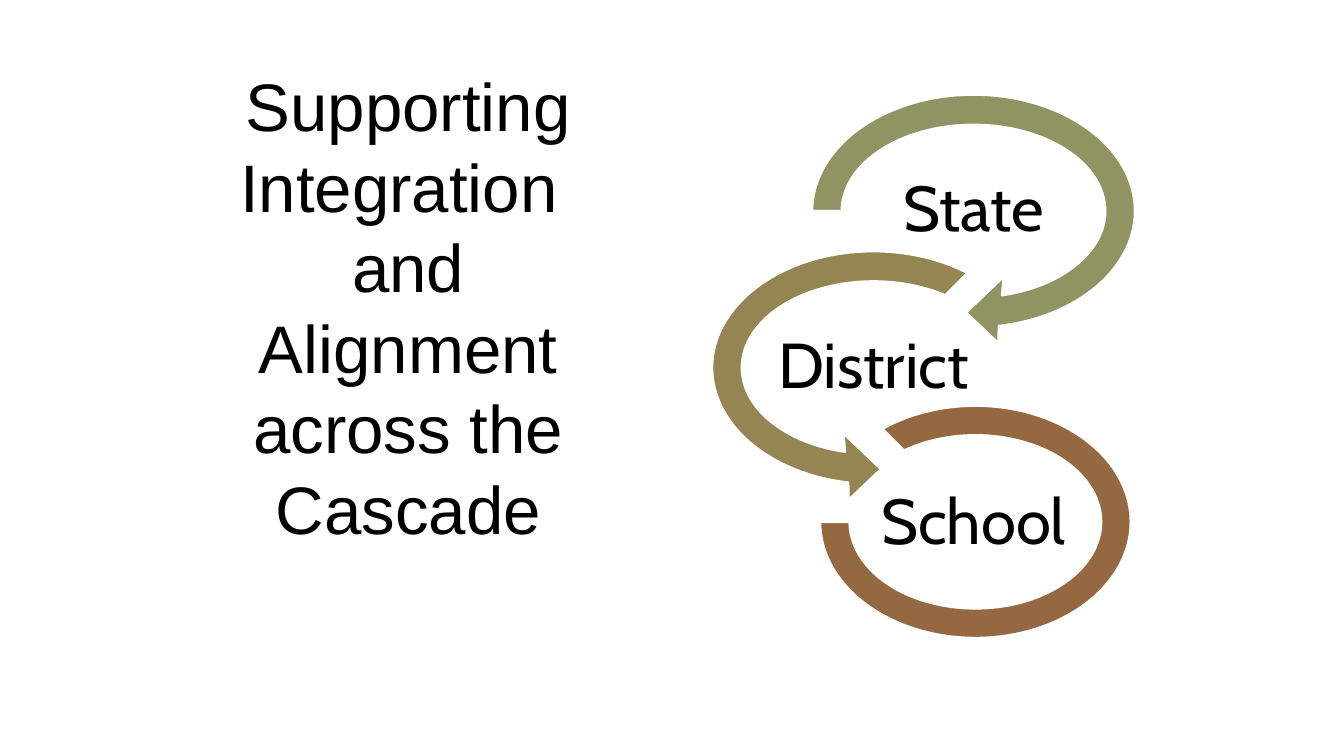
from math import ceil, cos, radians, sin, tan

from lxml import etree
from pptx import Presentation
from pptx.dml.color import RGBColor
from pptx.enum.shapes import MSO_SHAPE
from pptx.enum.text import MSO_ANCHOR, MSO_AUTO_SIZE, PP_ALIGN
from pptx.oxml.ns import qn
from pptx.util import Cm, Pt

CENTER = PP_ALIGN.CENTER
MIDDLE, BOTTOM = MSO_ANCHOR.MIDDLE, MSO_ANCHOR.BOTTOM
NO_AUTOFIT = MSO_AUTO_SIZE.NONE
BLOCK_ARC = MSO_SHAPE.BLOCK_ARC

# Content
TITLE = "Supporting Integration \vand Alignment across the Cascade"
LEVELS = [("State", "909462"), ("District", "948552"), ("School", "946941")]

# Layout, in cm
TITLE_BOX = (4.02, 4.77, 7.39, 5.72)
RIGHT_X, LEFT_X, FIRST_Y, PITCH = 18.4, 16.51, 3.99, 2.96
LABEL_W, LABEL_H = 3.78, 1.42
ARROW_W, ARROW_H = 6.83, 5.13
OUTER, INNER = (3.05, 2.2), (2.49, 1.63)  # arrow ring radii
ARROWHEAD = [(0.47, 2.5), (-0.14, 1.92), (0.57, 1.24)]  # from the ring centre
RING_BOX = (15.5, 7.67, 5.87, 4.39)


def color(hex_code):
    return RGBColor.from_string(hex_code)


def write(shape, text, *, size, font, anchor, margins, spacing=None):
    frame = shape.text_frame
    frame.auto_size = NO_AUTOFIT
    frame.word_wrap = True
    frame.vertical_anchor = anchor
    frame.margin_left = frame.margin_right = Cm(margins[0])
    frame.margin_top = frame.margin_bottom = Cm(margins[1])
    paragraph = frame.paragraphs[0]
    paragraph.text = text
    paragraph.alignment = CENTER
    paragraph.line_spacing = spacing
    for run in paragraph.runs:
        run.font.size = Pt(size)
        run.font.name = font
        run.font.color.rgb = color("000000")


def paint(shape, fill):
    shape.fill.solid()
    shape.fill.fore_color.rgb = color(fill)
    shape.line.color.rgb = color("FFFFFF")
    shape.line.width = Pt(1.25)
    shape.shadow.inherit = False


def ellipse_point(radii, angle):
    return radii[0] * cos(angle), radii[1] * sin(angle)


def arc_curves(radii, start, end):
    """Cubic curves along an ellipse around the origin, clockwise in degrees."""
    count = ceil(abs(end - start) / 90)
    step = radians(end - start) / count
    pull = 4 / 3 * tan(step / 4)
    curves = []
    for i in range(count):
        a = radians(start) + i * step
        b = a + step
        (ax, ay), (bx, by) = ellipse_point(radii, a), ellipse_point(radii, b)
        curves.append([
            (ax - pull * radii[0] * sin(a), ay + pull * radii[1] * cos(a)),
            (bx + pull * radii[0] * sin(b), by - pull * radii[1] * cos(b)),
            (bx, by),
        ])
    return curves


def add_curved_arrow(shapes, x, y, fill, *, outer_start, inner_start, mirror=1):
    # Frame of the arrow
    left, top = x - ARROW_W / 2, y - ARROW_H / 2
    right, bottom = left + ARROW_W, top + ARROW_H
    builder = shapes.build_freeform(Cm(left), Cm(top))
    builder.add_line_segments([(Cm(right), Cm(top)), (Cm(right), Cm(bottom)),
                               (Cm(left), Cm(bottom))])
    arrow = builder.convert_to_shape()

    # Curved outline inside the frame
    start = ellipse_point(OUTER, radians(outer_start))
    inner_end = ellipse_point(INNER, radians(437.5))
    steps = [("a:moveTo", [start])]
    steps += [("a:cubicBezTo", c) for c in arc_curves(OUTER, outer_start, 441)]
    steps += [("a:lnTo", [point]) for point in ARROWHEAD + [inner_end]]
    steps += [("a:cubicBezTo", c) for c in arc_curves(INNER, 437.5, inner_start)]
    steps.append(("a:close", []))
    outline = arrow._element.xpath(".//a:path")[0]
    for corner in list(outline):
        outline.remove(corner)
    for tag, points in steps:
        step = etree.SubElement(outline, qn(tag))
        for dx, dy in points:
            etree.SubElement(step, qn("a:pt"),
                             x=str(int(Cm(ARROW_W / 2 + mirror * dx))),
                             y=str(int(Cm(ARROW_H / 2 + dy))))
    paint(arrow, fill)


def add_ring(shapes, fill):
    ring = shapes.add_shape(BLOCK_ARC, *map(Cm, RING_BOX))
    for i, value in enumerate((135, 108, 0.127)):  # 225°, 180°, thickness
        ring.adjustments[i] = value
    paint(ring, fill)


def main():
    deck = Presentation()
    deck.slide_width, deck.slide_height = Cm(25.4), Cm(14.29)
    slide = deck.slides.add_slide(deck.slide_layouts[5])

    # Title
    title = slide.shapes.title
    title.left, title.top, title.width, title.height = map(Cm, TITLE_BOX)
    write(title, TITLE, size=36, font="Arial", anchor=BOTTOM, margins=(0.25, 0.13))

    # Cascade, swinging right, left, right
    cascade = slide.shapes.add_group_shape().shapes
    for i, (level, fill) in enumerate(LEVELS):
        x = LEFT_X if i % 2 else RIGHT_X
        y = FIRST_Y + i * PITCH
        if i == len(LEVELS) - 1:
            add_ring(cascade, fill)
        elif i == 0:
            add_curved_arrow(cascade, x, y, fill, outer_start=180, inner_start=180)
        else:
            add_curved_arrow(cascade, x, y, fill, outer_start=234.4,
                             inner_start=237, mirror=-1)
        label = cascade.add_textbox(Cm(x - LABEL_W / 2), Cm(y - LABEL_H / 2),
                                    Cm(LABEL_W), Cm(LABEL_H))
        write(label, level, size=34, font="Cabin", anchor=MIDDLE,
              margins=(0.05, 0.05), spacing=0.9)

    deck.save("out.pptx")


if __name__ == "__main__":
    main()
